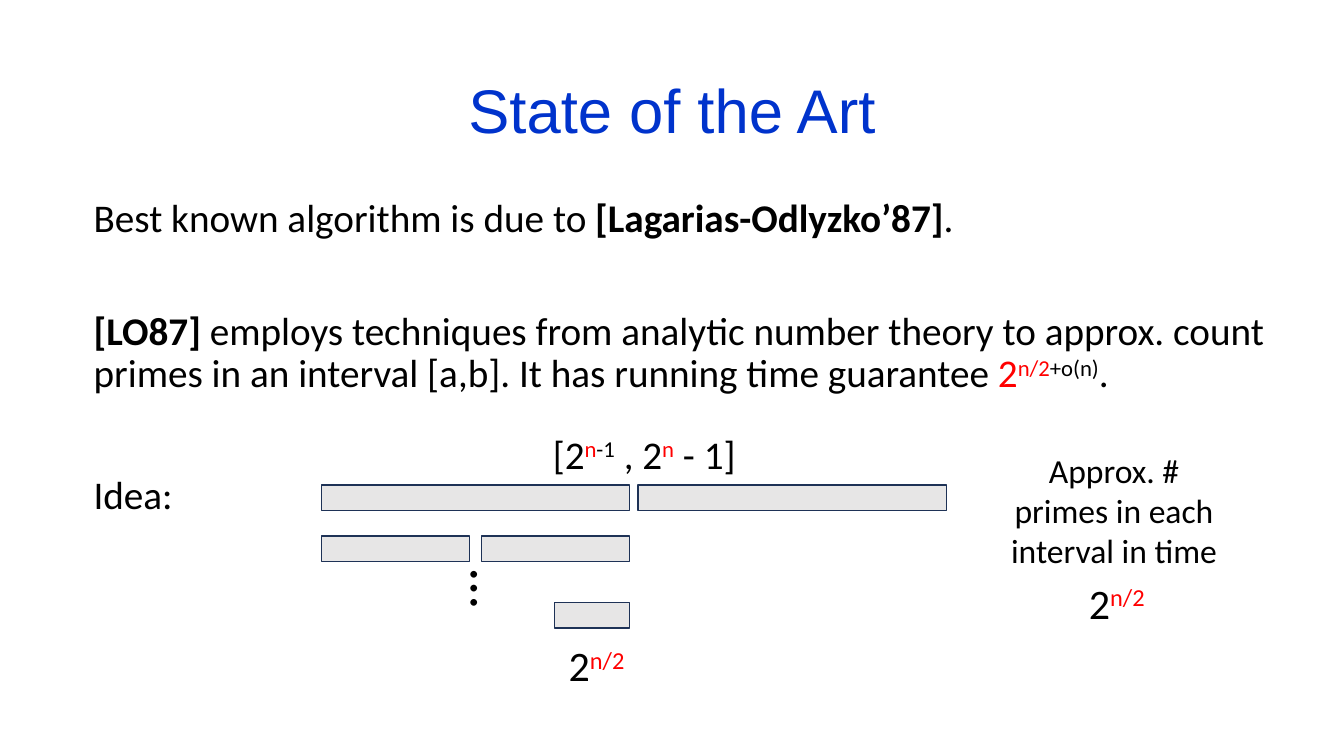
from pptx import Presentation
from pptx.dml.color import RGBColor
from pptx.enum.shapes import MSO_SHAPE
from pptx.enum.text import MSO_ANCHOR, PP_ALIGN
from pptx.util import Cm, Pt

BLACK = RGBColor(0x00, 0x00, 0x00)
RED = RGBColor(0xFF, 0x00, 0x00)
TITLE_BLUE = RGBColor(0x00, 0x33, 0xCC)
BAR_GREY = RGBColor(0xE7, 0xE6, 0xE6)
BAR_OUTLINE = RGBColor(0x1E, 0x32, 0x56)

RECTANGLE = MSO_SHAPE.RECTANGLE
LEFT = PP_ALIGN.LEFT
CENTER = PP_ALIGN.CENTER
TOP = MSO_ANCHOR.TOP
MIDDLE = MSO_ANCHOR.MIDDLE

BAR_HEIGHT = 0.64
BARS_LEFT = 8.1
HALF_RIGHT = 15.87


def add_span(para, text, size=28, font="Calibri", color=BLACK, bold=False, raised=False):
    span = para.add_run()
    span.text = text
    span.font.size = Pt(size)
    span.font.name = font
    span.font.color.rgb = color
    span.font.bold = bold
    if raised:
        span.font._element.set("baseline", "30000")


class SlideBuilder:
    def __init__(self, page, size=28, font="Calibri"):
        self.page = page
        self.size = size
        self.font = font

    def text(self, left, top, width, height, paragraphs, align=LEFT, anchor=TOP,
             line_spacing=1.0, space_before=(0,), rotation=0, **style):
        box = self.page.shapes.add_textbox(Cm(left), Cm(top), Cm(width), Cm(height))
        box.rotation = rotation
        frame = box.text_frame
        frame.word_wrap = True
        frame.vertical_anchor = anchor
        base = {"size": self.size, "font": self.font, **style}
        for index, (spans, before) in enumerate(zip(paragraphs, space_before)):
            para = frame.add_paragraph() if index else frame.paragraphs[0]
            para.alignment = align
            para.line_spacing = line_spacing
            para.space_before = Pt(before)
            for words, changes in spans:
                add_span(para, words, **{**base, **changes})

    def bar(self, left, top, width):
        shape = self.page.shapes.add_shape(
            RECTANGLE, Cm(left), Cm(top), Cm(width), Cm(BAR_HEIGHT))
        shape.shadow.inherit = False
        shape.fill.solid()
        shape.fill.fore_color.rgb = BAR_GREY
        shape.line.color.rgb = BAR_OUTLINE
        shape.line.width = Pt(1)

    def halves(self, top, width, gap):
        for index in range(2):
            self.bar(BARS_LEFT + index * (width + gap), top, width)

    def power(self, left, top):
        spans = [("2", {}), ("n/2", {"color": RED, "raised": True})]
        self.text(left, top, 3.25, 1.55, [spans], align=CENTER, size=30)


def main():
    deck = Presentation()
    deck.slide_width = Cm(33.87)
    deck.slide_height = Cm(19.05)
    builder = SlideBuilder(deck.slides.add_slide(deck.slide_layouts[6]))

    builder.text(2.34, 1.02, 29.21, 3.68, [[("State of the Art", {})]], align=CENTER,
                 anchor=MIDDLE, line_spacing=0.9, size=44, font="Arial", color=TITLE_BLUE)

    builder.text(2.11, 4.88, 30.2, 12.01, [
        [("Best known algorithm is due to ", {}),
         ("[Lagarias-Odlyzko’87]", {"bold": True}),
         (".", {})],
        [("[LO87]", {"bold": True}),
         (" employs techniques from analytic number theory to approx. count primes "
          "in an interval [a,b]. It has running time guarantee ", {}),
         ("2", {"color": RED}),
         ("n/2", {"color": RED, "raised": True}),
         ("+o(n)", {"raised": True}),
         (".", {})],
    ], line_spacing=0.9, space_before=(10, 50.5))

    builder.text(2.11, 11.73, 6.81, 1.45, [[("Idea:", {})]])
    builder.text(12.5, 10.72, 7.47, 1.45, [[
        ("[2", {}),
        ("n", {"color": RED, "raised": True}),
        ("-1", {"raised": True}),
        (" , 2", {}),
        ("n", {"color": RED, "raised": True}),
        (" - 1]", {}),
    ]], align=CENTER)

    builder.halves(12.22, 7.77, 0.21)
    builder.halves(13.51, 3.74, 0.29)
    smallest = 1.9
    builder.bar(HALF_RIGHT - smallest, 15.19, smallest)
    builder.power(13.41, 16)

    builder.text(24.94, 11.2, 6.27, 3.33,
                 [[("Approx. # primes in each interval in time", {})]], align=CENTER, size=24)
    builder.power(26.52, 14.43)
    builder.text(11.43, 14.12, 1.98, 1.96, [[("…", {})]], rotation=90, size=40)

    deck.save("out.pptx")


if __name__ == "__main__":
    main()
